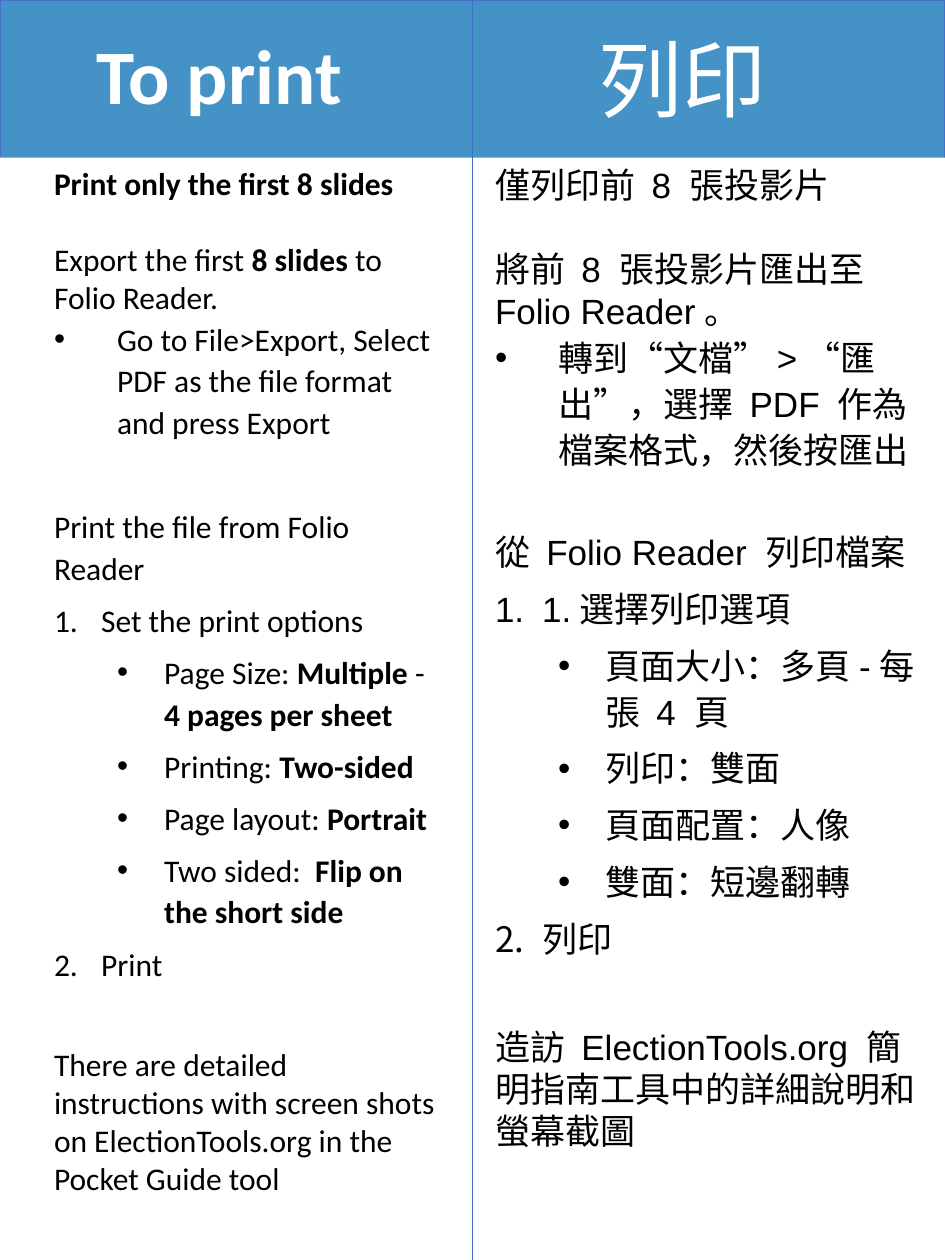
"""Build a portrait slide of printing instructions in English and Chinese."""
import pptx
import pptx.dml.color
import pptx.enum.shapes
import pptx.oxml.ns
import pptx.util
from lxml import etree

Cm = pptx.util.Cm
Pt = pptx.util.Pt
qn = pptx.oxml.ns.qn
COLORS = {"band": "4492C6", "edge": "4472C4", "divider": "3F6FC3",
          "paper": "FFFFFF", "ink": "000000"}
W, H, HEADER = 19.05, 25.4, 3.18
INDENTS = {"dot": (1.27, 1.27), "number": (0.95, 0.95), "subdot": (2.22, 0.95)}


def rgb(name):
    return pptx.dml.color.RGBColor.from_string(COLORS[name])


def add_text(tf, text, size=18, font="Calibri", color="ink", bold=False,
             bullet=None, before=0, spacing=1.0):
    """Add a paragraph to tf; parts between ** marks are bold."""
    p = tf.paragraphs[0]
    if p.runs:
        p = tf.add_paragraph()
    if bullet:
        pPr = p._p.get_or_add_pPr()
        left, hang = INDENTS[bullet]
        pPr.set("marL", str(Cm(left)))
        pPr.set("indent", str(-Cm(hang)))
        clr = etree.SubElement(pPr, qn("a:buClr"))
        etree.SubElement(clr, qn("a:srgbClr"), val=COLORS["ink"])
        if bullet == "number":
            etree.SubElement(pPr, qn("a:buFont"), typeface=font)
            etree.SubElement(pPr, qn("a:buAutoNum"), type="arabicPeriod")
        else:
            etree.SubElement(pPr, qn("a:buFont"), typeface="Arial")
            etree.SubElement(pPr, qn("a:buChar"), char="•")
        p.level = 1 if bullet == "subdot" else 0
    p.line_spacing = spacing
    p.space_before = Pt(before)
    for i, part in enumerate(text.split("**")):
        if part:
            r = p.add_run()
            r.text = part
            r.font.size = Pt(size)
            r.font.name = font
            r.font.bold = bold or i % 2 == 1
            r.font.color.rgb = rgb(color)


prs = pptx.Presentation()
prs.slide_width, prs.slide_height = Cm(W), Cm(H)
s = prs.slides.add_slide(prs.slide_layouts[6])

for top, fill, line in [(0, "band", "edge"), (HEADER, "paper", None)]:
    sp = s.shapes.add_shape(pptx.enum.shapes.MSO_SHAPE.RECTANGLE,
                            Cm(0), Cm(top), Cm(W), Cm(H - top))
    sp.shadow.inherit = False
    sp.fill.solid()
    sp.fill.fore_color.rgb = rgb(fill)
    if line:
        sp.line.color.rgb = rgb(line)
        sp.line.width = Pt(1)
    else:
        sp.line.fill.background()

STEP = {"before": 6, "spacing": 1.1}
DOT = {"bullet": "dot", "spacing": 1.1}
NUMBER = {"bullet": "number", **STEP}
SUBDOT = {"bullet": "subdot", **STEP}

english = [
    ("Print only the first 8 slides", {"bold": True}),
    ("Export the first **8 slides **to Folio Reader.", {"before": 22}),
    ("Go to File>Export, Select PDF as the file format and press Export", DOT),
    ("Print the file from Folio Reader", {"before": 36, "spacing": 1.1}),
    ("Set the print options", NUMBER),
    ("Page Size: **Multiple** - **4 pages per sheet**", SUBDOT),
    ("Printing: **Two-sided**", SUBDOT),
    ("Page layout: **Portrait**", SUBDOT),
    ("Two sided:  **Flip on the short side**", SUBDOT),
    ("Print", NUMBER),
    ("There are detailed instructions with screen shots on ElectionTools.org "
     "in the Pocket Guide tool", {"before": 36}),
]
chinese = [
    ("僅列印前 8 張投影片", {}),
    ("將前 8 張投影片匯出至 Folio Reader。", {"before": 24}),
    ("轉到“文檔”>“匯出”，選擇 PDF 作為檔案格式，然後按匯出", DOT),
    ("從 Folio Reader 列印檔案", {"before": 32, "spacing": 1.1}),
    ("1.選擇列印選項", NUMBER),
    ("頁面大小：多頁-每張 4 頁", SUBDOT),
    ("列印：雙面", SUBDOT),
    ("頁面配置：人像", SUBDOT),
    ("雙面：短邊翻轉", SUBDOT),
    ("列印", NUMBER),
    ("造訪 ElectionTools.org 簡明指南工具中的詳細說明和螢幕截圖", {"before": 38}),
]
title = {"color": "paper"}
boxes = [
    (1.7, 0.43, 7.87, 2.13, "Calibri", 44, [("To print", {"bold": True, **title})]),
    (0.84, HEADER, 8.26, 19.66, "Calibri", 18, english),
    (11.81, 0.43, 7.87, 2.13, "Arial", 48, [("列印", title)]),
    (9.73, HEADER, 9.32, 19.66, "Arial", 20, chinese),
]
for left, top, width, height, font, size, lines in boxes:
    tf = s.shapes.add_textbox(Cm(left), Cm(top), Cm(width), Cm(height)).text_frame
    tf.word_wrap = True
    for text, style in lines:
        add_text(tf, text, size=size, font=font, **style)

divider = s.shapes.add_connector(pptx.enum.shapes.MSO_CONNECTOR.STRAIGHT,
                                 Cm(W / 2), Cm(0), Cm(W / 2), Cm(H))
divider.line.color.rgb = rgb("divider")
divider.line.width = Pt(0.75)
etree.SubElement(divider._element.spPr, qn("a:effectLst"))

prs.save("out.pptx")
